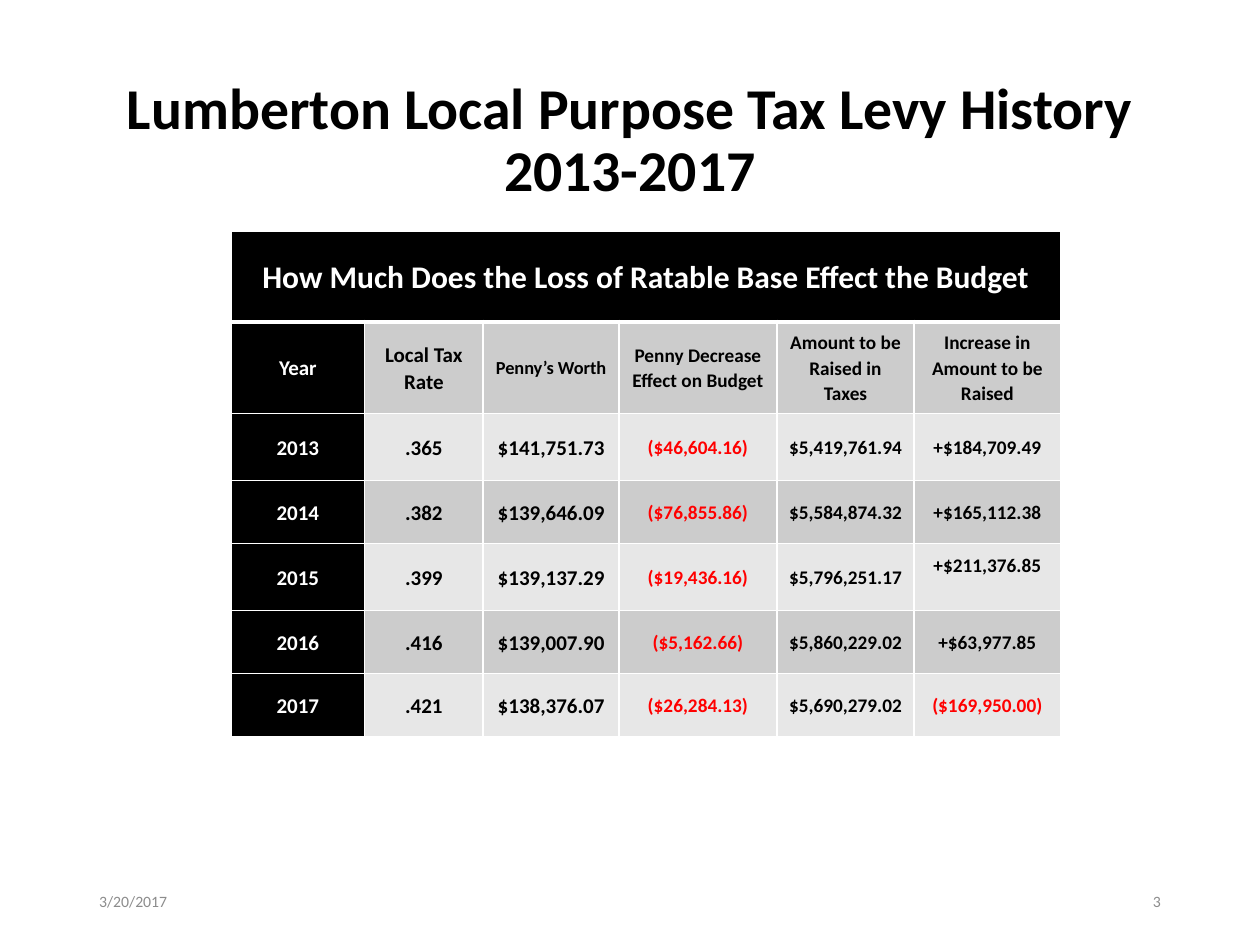
from lxml.etree import SubElement
from pptx import Presentation
from pptx.dml.color import RGBColor
from pptx.enum.text import MSO_ANCHOR as Anchor, PP_ALIGN as Align
from pptx.oxml.ns import qn
from pptx.util import Cm, Pt

FONT = "Calibri"
BLACK, WHITE, RED, GREY = "000000", "FFFFFF", "FF0000", "8C8C8C"
BANDS = ("CCCCCC", "E7E7E7")
COLUMN_WIDTHS = (2.69, 2.39, 2.74, 3.18, 2.77, 2.95)
ROW_HEIGHTS = (1.83, 1.85, 1.35, 1.27, 1.35, 1.27, 1.27)
BODY_SIZES = (12, 12, 12, 11, 11, 11)
HEADING_SIZES = (12, 12, 10.5, 11, 11, 11)
BANNER = "How Much Does the Loss of Ratable Base Effect the Budget"
ROWS = (
    ("Year", "Local Tax\nRate", "Penny’s Worth", "Penny Decrease Effect on Budget",
     "Amount to be Raised in Taxes", "Increase in Amount to be Raised"),
    ("2013", ".365", "$141,751.73", "($46,604.16)", "$5,419,761.94", "+$184,709.49"),
    ("2014", ".382", "$139,646.09", "($76,855.86)", "$5,584,874.32", "+$165,112.38"),
    ("2015", ".399", "$139,137.29", "($19,436.16)", "$5,796,251.17", "+$211,376.85"),
    ("2016", ".416", "$139,007.90", "($5,162.66)", "$5,860,229.02", "+$63,977.85"),
    ("2017", ".421", "$138,376.07", "($26,284.13)", "$5,690,279.02", "($169,950.00)"),
)


def color(value):
    return RGBColor.from_string(value)


def write(frame, text, size, ink, align, bold=False, spacing=None):
    frame.text = text
    for para in frame.paragraphs:
        para.alignment = align
        para.line_spacing = spacing
        para.font.name = FONT
        para.font.size = Pt(size)
        para.font.bold = bold
        para.font.color.rgb = color(ink)


def add_text(page, left, top, width, height, text, size, ink, align, **style):
    box = page.shapes.add_textbox(Cm(left), Cm(top), Cm(width), Cm(height))
    frame = box.text_frame
    frame.word_wrap = True
    frame.vertical_anchor = Anchor.MIDDLE
    write(frame, text, size, ink, align, **style)


def set_borders(cell, top=1, bottom=1):
    properties = cell._tc.get_or_add_tcPr()
    widths = (("a:lnL", 1), ("a:lnR", 1), ("a:lnT", top), ("a:lnB", bottom))
    for position, (tag, width) in enumerate(widths):
        line = SubElement(properties, qn(tag), w=str(Pt(width)))
        fill = SubElement(line, qn("a:solidFill"))
        SubElement(fill, qn("a:srgbClr"), val=WHITE)
        properties.insert(position, line)


def fill_cell(cell, text, size, ink, background, **borders):
    cell.fill.solid()
    cell.fill.fore_color.rgb = color(background)
    cell.vertical_anchor = Anchor.MIDDLE
    cell.margin_left = cell.margin_right = Cm(0.18)
    cell.margin_top = cell.margin_bottom = 0
    write(cell.text_frame, text, size, ink, Align.CENTER, bold=True, spacing=1.07)
    set_borders(cell, **borders)


def add_levy_table(page, left, top):
    frame = page.shapes.add_table(
        len(ROW_HEIGHTS), len(COLUMN_WIDTHS), Cm(left), Cm(top),
        Cm(sum(COLUMN_WIDTHS)), Cm(sum(ROW_HEIGHTS)))
    table = frame.table
    for column, width in zip(table.columns, COLUMN_WIDTHS):
        column.width = Cm(width)
    for row, height in zip(table.rows, ROW_HEIGHTS):
        row.height = Cm(height)

    # Banner across all columns
    table.cell(0, 0).merge(table.cell(0, len(COLUMN_WIDTHS) - 1))
    for cell in table.rows[0].cells:
        fill_cell(cell, "" if cell.is_spanned else BANNER, 18, WHITE, BLACK, bottom=3)

    # Headings and yearly figures
    for r, values in enumerate(ROWS):
        sizes = BODY_SIZES if r else HEADING_SIZES
        for c, (text, size) in enumerate(zip(values, sizes)):
            ink = WHITE if c == 0 else RED if text.startswith("(") else BLACK
            background = BANDS[r % 2] if c else BLACK
            fill_cell(table.cell(r + 1, c), text, size, ink, background,
                      top=1 if r else 3)

    # The 2015 increase sits above the middle of its cell
    table.cell(4, 5).margin_bottom = Cm(0.5)


def add_footer(page, left, top, width, height):
    part = 5.72
    add_text(page, left, top, part, height, "3/20/2017", 9, GREY, Align.LEFT)
    add_text(page, left + width - part, top, part, height, "3", 9, GREY, Align.RIGHT)


def main():
    deck = Presentation()
    deck.slide_width, deck.slide_height = Cm(25.4), Cm(19.05)
    page = deck.slides.add_slide(deck.slide_layouts[6])
    add_text(page, 1.75, 1.02, 21.9, 3.68,
             "Lumberton Local Purpose Tax Levy History\v2013-2017",
             33, BLACK, Align.CENTER, bold=True, spacing=0.9)
    add_footer(page, 1.75, 17.65, 21.9, 1.02)
    add_levy_table(page, 4.66, 4.66)
    deck.save("out.pptx")


if __name__ == "__main__":
    main()
